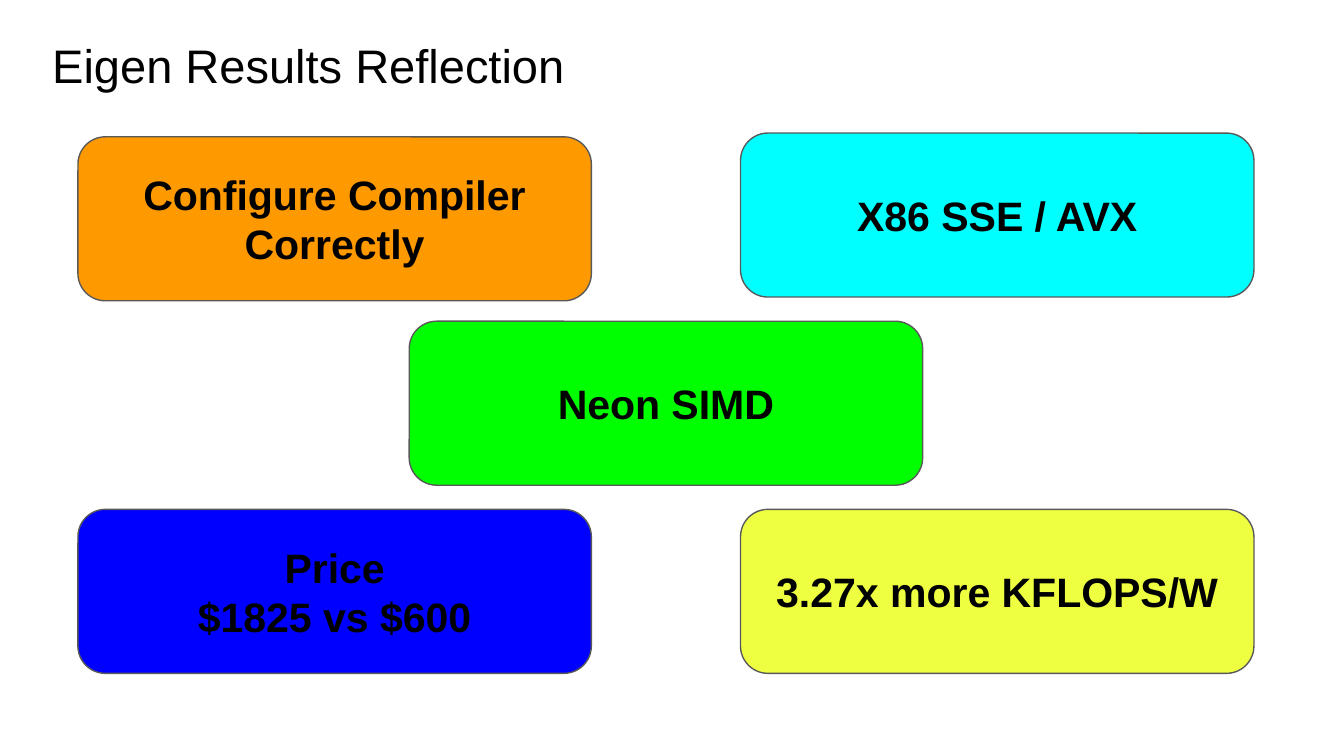
from pptx import Presentation
from pptx.dml.color import RGBColor as RGB
from pptx.enum.shapes import MSO_SHAPE as Kind
from pptx.enum.text import MSO_ANCHOR as Anchor, PP_ALIGN as Align
from pptx.util import Inches as In, Pt


def tint(code):
    return RGB.from_string(code)


def write(shape, text, size=22, bold=False, align=Align.LEFT,
          anchor=Anchor.MIDDLE, font="Arial", color="000000"):
    frame = shape.text_frame
    frame.word_wrap = True
    frame.vertical_anchor = anchor
    frame.margin_left = frame.margin_right = In(0.1)
    frame.margin_top = frame.margin_bottom = In(0.1)
    para = frame.paragraphs[0]
    para.text = text
    para.alignment = align
    for run in para.runs:
        run.font.name, run.font.size = font, Pt(size)
        run.font.bold = bold
        run.font.color.rgb = tint(color)


class Board:
    """Slide with a title and cards on a grid of columns and rows."""

    left, top = 0.58, 0.99
    step_x, step_y = (5.51 - 0.58) / 2, 1.4
    wide, high = 3.82, 1.22
    edge = "595959"

    def __init__(self, deck):
        self.slide = deck.slides.add_slide(deck.slide_layouts[6])

    def title(self, text):
        box = self.slide.shapes.add_textbox(In(0.29), In(0.16), In(9.32), In(0.63))
        write(box, text, size=25.2, anchor=Anchor.BOTTOM)

    def card(self, text, col, row, fill):
        x = self.left + col * self.step_x
        y = self.top + row * self.step_y
        card = self.slide.shapes.add_shape(
            Kind.ROUNDED_RECTANGLE, In(x), In(y), In(self.wide), In(self.high))
        card.shadow.inherit = False
        card.fill.solid()
        card.fill.fore_color.rgb = tint(fill)
        card.line.color.rgb = tint(self.edge)
        card.line.width = Pt(0.75)
        write(card, text, bold=True, align=Align.CENTER)


def main():
    deck = Presentation()
    deck.slide_width, deck.slide_height = In(10), In(10 * 9 / 16)
    board = Board(deck)
    board.title("Eigen Results Reflection")
    cards = [
        ("Configure Compiler Correctly", 0, 0.02, "FF9900"),
        ("Neon SIMD", 1, 1, "00FF00"),
        ("3.27x more KFLOPS/W", 2, 2, "EEFF41"),
        ("X86 SSE / AVX", 2, 0, "00FFFF"),
        ("Price\v$1825 vs $600", 0, 2, "0000FF"),
    ]
    for card in cards:
        board.card(*card)
    deck.save("out.pptx")


if __name__ == "__main__":
    main()
